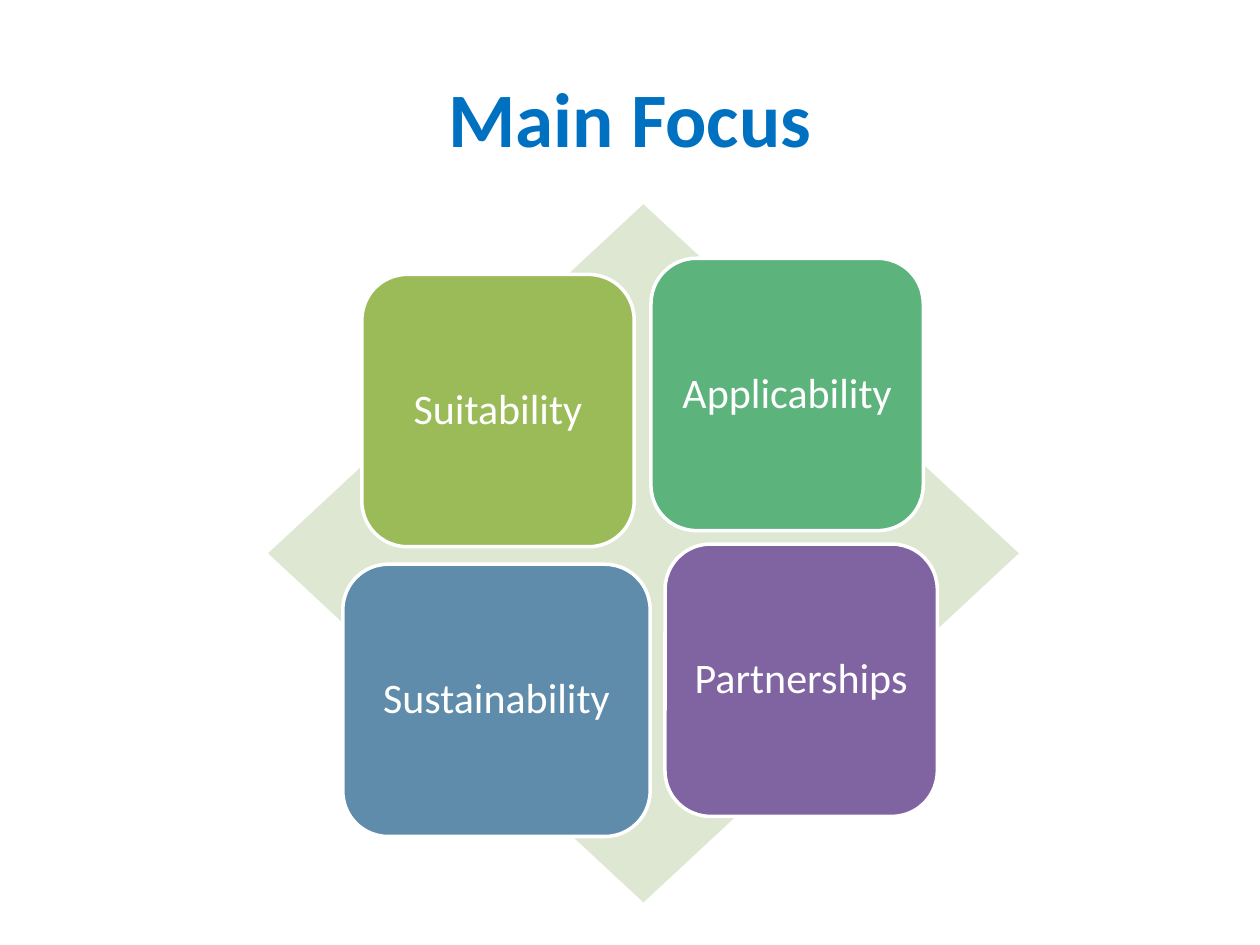
"""Build the Main Focus slide: four rounded cards over a diamond."""
import pptx
import pptx.dml.color
import pptx.enum.shapes
import pptx.enum.text
import pptx.util

Pt = pptx.util.Pt
MSO = pptx.enum.shapes.MSO_SHAPE
CENTER = pptx.enum.text.PP_ALIGN.CENTER
MIDDLE = pptx.enum.text.MSO_ANCHOR.MIDDLE


def paint(fmt, color):
    fmt.solid()
    fmt.fore_color.rgb = pptx.dml.color.RGBColor.from_string(color)


def write(sp, text, color, frame, para, font):
    tf = sp.text_frame
    p = tf.paragraphs[0]
    r = p.add_run()
    r.text = text
    paint(r.font.fill, color)
    for obj, values in ((tf, frame), (p, para), (r.font, font)):
        for name, value in values.items():
            setattr(obj, name, value)


prs = pptx.Presentation()
prs.slide_width, prs.slide_height = Pt(720), Pt(540)
s = prs.slides.add_slide(prs.slide_layouts[5])

title = s.shapes.title
title.left, title.top, title.width, title.height = Pt(36), Pt(21.6), Pt(648), Pt(90)
write(title, "Main Focus", "0070C0",
      {"vertical_anchor": MIDDLE, "word_wrap": True},
      {"alignment": CENTER},
      {"name": "Calibri", "size": Pt(44), "bold": True})

diamond = s.shapes.add_shape(MSO.DIAMOND, Pt(153.2), Pt(116.7), Pt(429), Pt(399))
diamond.shadow.inherit = False
paint(diamond.fill, "DEE7D1")
diamond.line.fill.background()

card_height = 155.6
cards = [
    ("Suitability", 206.8, 156.8, 155.6, "9BBB59"),
    ("Applicability", 372, 147.6, 155.6, "5CB37C"),
    ("Sustainability", 195.9, 322.4, 175.6, "608CAB"),
    ("Partnerships", 380, 310.9, 155.6, "8064A2"),
]
for text, left, top, width, color in cards:
    sp = s.shapes.add_shape(MSO.ROUNDED_RECTANGLE, Pt(left), Pt(top), Pt(width), Pt(card_height))
    sp.shadow.inherit = False
    paint(sp.fill, color)
    paint(sp.line.fill, "FFFFFF")
    sp.line.width = Pt(2)
    write(sp, text, "FFFFFF",
          {"vertical_anchor": MIDDLE, "word_wrap": True, "margin_left": 0,
           "margin_right": 0, "margin_top": 0, "margin_bottom": 0},
          {"alignment": CENTER, "line_spacing": 0.9},
          {"name": "Calibri", "size": Pt(24)})

prs.save("out.pptx")
